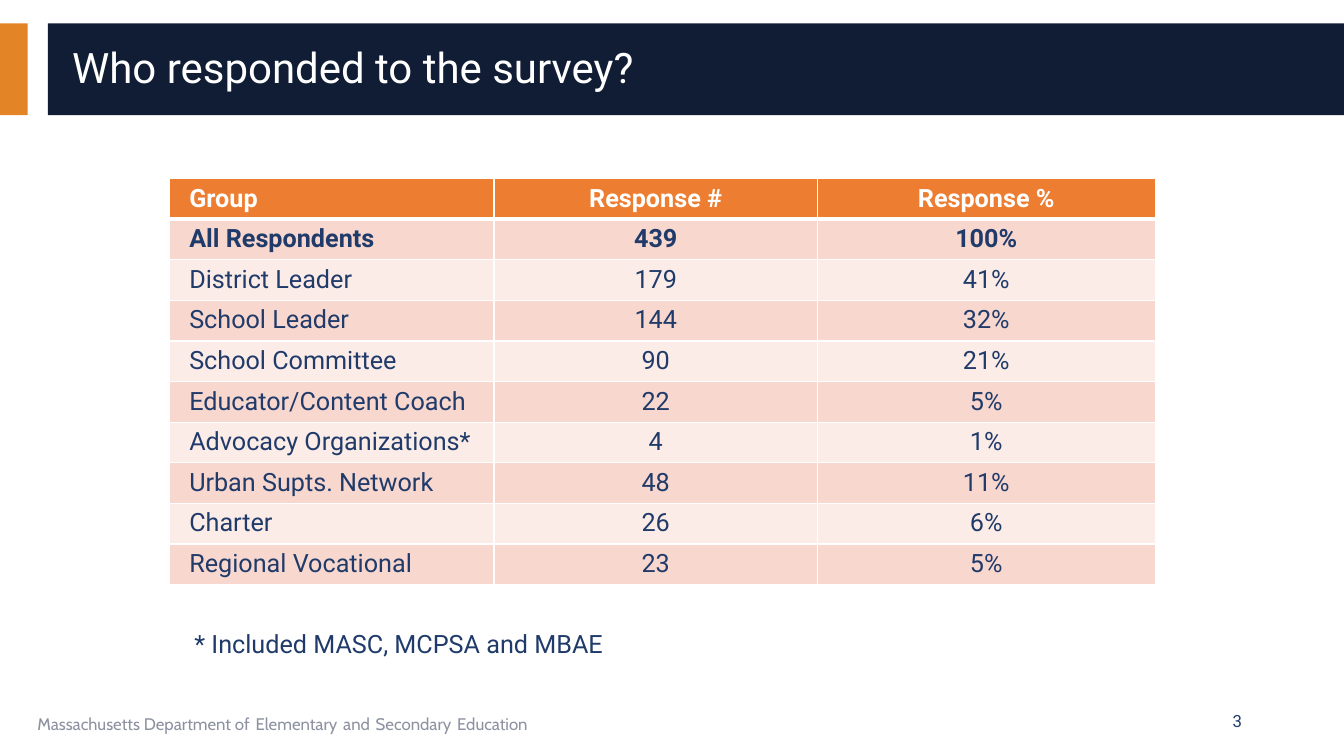
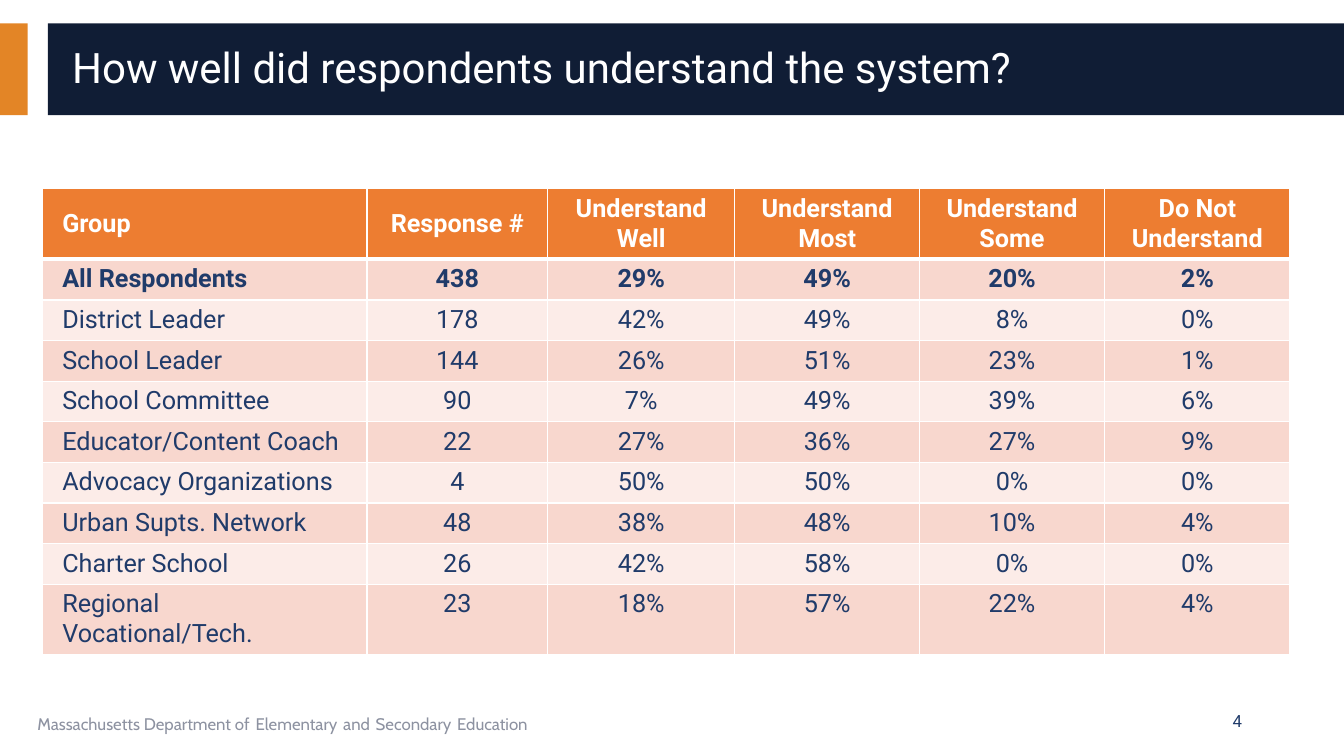
from lxml.etree import SubElement
from pptx import Presentation
from pptx.dml.color import RGBColor
from pptx.enum.shapes import MSO_SHAPE
from pptx.enum.text import MSO_ANCHOR, PP_ALIGN
from pptx.oxml.ns import qn
from pptx.util import Cm, Pt

# Shared look
WHITE, NAVY, INK = "FFFFFF", "101D35", "203B6A"
BAND_ORANGE, HEADER_ORANGE = "E38526", "ED7D31"
DARK_ROW, LIGHT_ROW = "F8D7CE", "FCECE8"
FOOTER_GREY = "8D92A1"
SLIDE_WIDTH, SLIDE_HEIGHT = 33.87, 19.05
ROW_HEIGHT, TALL_ROW_HEIGHT = 1.02, 1.72
FOOTER_PARTS = ["Massachusetts Department of", "Elementary", "and", "Secondary", "Education"]
BANDS = [(0, 0.7, BAND_ORANGE), (1.21, SLIDE_WIDTH - 1.21, NAVY)]

# Content of each slide; a line break in a cell starts a new paragraph
SLIDES = [
    {
        "title": "Who responded to the survey?",
        "number": "3",
        "note": "* Included MASC, MCPSA and MBAE",
        "left": 4.27,
        "top": 4.5,
        "columns": [8.18, 8.15, 8.51],
        "tall_rows": [],
        "rows": [
            ["Group", "Response #", "Response %"],
            ["All Respondents", "439", "100%"],
            ["District Leader", "179", "41%"],
            ["School Leader", "144", "32%"],
            ["School Committee", "90", "21%"],
            ["Educator/Content Coach", "22", "5%"],
            ["Advocacy Organizations*", "4", "1%"],
            ["Urban Supts. Network", "48", "11%"],
            ["Charter", "26", "6%"],
            ["Regional Vocational", "23", "5%"],
        ],
    },
    {
        "title": "How well did respondents understand the system?",
        "number": "4",
        "note": None,
        "left": 1.07,
        "top": 4.75,
        "columns": [8.18, 4.55, 4.72, 4.65, 4.67, 4.67],
        "tall_rows": [0, 9],
        "rows": [
            ["Group", "Response #", "Understand Well", "Understand Most",
             "Understand\nSome", "Do Not\nUnderstand"],
            ["All Respondents", "438", "29%", "49%", "20%", "2%"],
            ["District Leader", "178", "42%", "49%", "8%", "0%"],
            ["School Leader", "144", "26%", "51%", "23%", "1%"],
            ["School Committee", "90", "7%", "49%", "39%", "6%"],
            ["Educator/Content Coach", "22", "27%", "36%", "27%", "9%"],
            ["Advocacy Organizations", "4", "50%", "50%", "0%", "0%"],
            ["Urban Supts. Network", "48", "38%", "48%", "10%", "4%"],
            ["Charter School", "26", "42%", "58%", "0%", "0%"],
            ["Regional Vocational/Tech.", "23", "18%", "57%", "22%", "4%"],
        ],
    },
]


def color(hex_value):
    return RGBColor.from_string(hex_value)


def write_text(paragraph, text, size=18, ink=INK, font="Roboto", bold=False, align=PP_ALIGN.LEFT):
    paragraph.alignment = align
    run = paragraph.add_run()
    run.text = text
    run.font.size = Pt(size)
    run.font.name = font
    run.font.bold = bold
    run.font.color.rgb = color(ink)


presentation = Presentation()
presentation.slide_width = Cm(SLIDE_WIDTH)
presentation.slide_height = Cm(SLIDE_HEIGHT)

for content in SLIDES:
    slide = presentation.slides.add_slide(presentation.slide_layouts[6])

    # Title bands
    for left, width, fill in BANDS:
        band = slide.shapes.add_shape(MSO_SHAPE.RECTANGLE, Cm(left), Cm(0.59), Cm(width), Cm(2.31))
        band.shadow.inherit = False
        band.fill.solid()
        band.fill.fore_color.rgb = color(fill)
        band.line.fill.background()

    # Footer, with wider gaps between its parts
    footer = slide.shapes.add_textbox(Cm(0.69), Cm(17.65), Cm(21.44), Cm(1.02))
    footer.text_frame.word_wrap = True
    paragraph = footer.text_frame.paragraphs[0]
    for index, part in enumerate(FOOTER_PARTS):
        if index:
            write_text(paragraph, " ", font="Cabin")
        write_text(paragraph, part, size=12, ink=FOOTER_GREY, font="Cabin")

    # Title, slide number and note
    text_boxes = [
        (content["title"], (1.57, 0.81, 31.6, 1.88), MSO_ANCHOR.MIDDLE, {"size": 30, "ink": WHITE}),
        (content["number"], (23.93, 17.65, 7.62, 1.02), MSO_ANCHOR.MIDDLE,
         {"size": 12, "align": PP_ALIGN.RIGHT}),
    ]
    if content["note"]:
        text_boxes.append((content["note"], (4.65, 15.7, 21.92, 1.02), MSO_ANCHOR.TOP, {}))
    for text, place, anchor, text_format in text_boxes:
        box = slide.shapes.add_textbox(*[Cm(length) for length in place])
        box.text_frame.word_wrap = True
        box.text_frame.vertical_anchor = anchor
        paragraph = box.text_frame.paragraphs[0]
        paragraph.line_spacing = 0.9 if text == content["title"] else 1.0
        write_text(paragraph, text, **text_format)

    # Table frame
    rows, columns = content["rows"], content["columns"]
    heights = [TALL_ROW_HEIGHT if index in content["tall_rows"] else ROW_HEIGHT
               for index in range(len(rows))]
    table = slide.shapes.add_table(
        len(rows), len(columns), Cm(content["left"]), Cm(content["top"]),
        Cm(sum(columns)), Cm(sum(heights))).table
    for column, width in zip(table.columns, columns):
        column.width = Cm(width)
    for row, height in zip(table.rows, heights):
        row.height = Cm(height)

    # Table cells
    for row_index, row in enumerate(rows):
        is_header = row_index == 0
        row_fill = HEADER_ORANGE if is_header else DARK_ROW if row_index % 2 else LIGHT_ROW
        for column_index, text in enumerate(row):
            cell = table.cell(row_index, column_index)
            cell.margin_left = cell.margin_right = Cm(0.5)
            cell.margin_top = cell.margin_bottom = Cm(0.13)
            cell.vertical_anchor = MSO_ANCHOR.MIDDLE if is_header else MSO_ANCHOR.TOP

            # White borders, thick between header and body
            properties = cell._tc.get_or_add_tcPr()
            for side in ("lnL", "lnR", "lnT", "lnB"):
                is_thick = (row_index, side) in [(0, "lnB"), (1, "lnT")]
                border = SubElement(properties, qn(f"a:{side}"), w=str(Pt(3 if is_thick else 1)))
                border_fill = SubElement(border, qn("a:solidFill"))
                SubElement(border_fill, qn("a:srgbClr"), val=WHITE)
            cell.fill.solid()
            cell.fill.fore_color.rgb = color(row_fill)

            frame = cell.text_frame
            for line_index, line in enumerate(text.split("\n")):
                paragraph = frame.add_paragraph() if line_index else frame.paragraphs[0]
                write_text(paragraph, line, ink=WHITE if is_header else INK, bold=row_index < 2,
                           align=PP_ALIGN.CENTER if column_index else PP_ALIGN.LEFT)

presentation.save("out.pptx")
